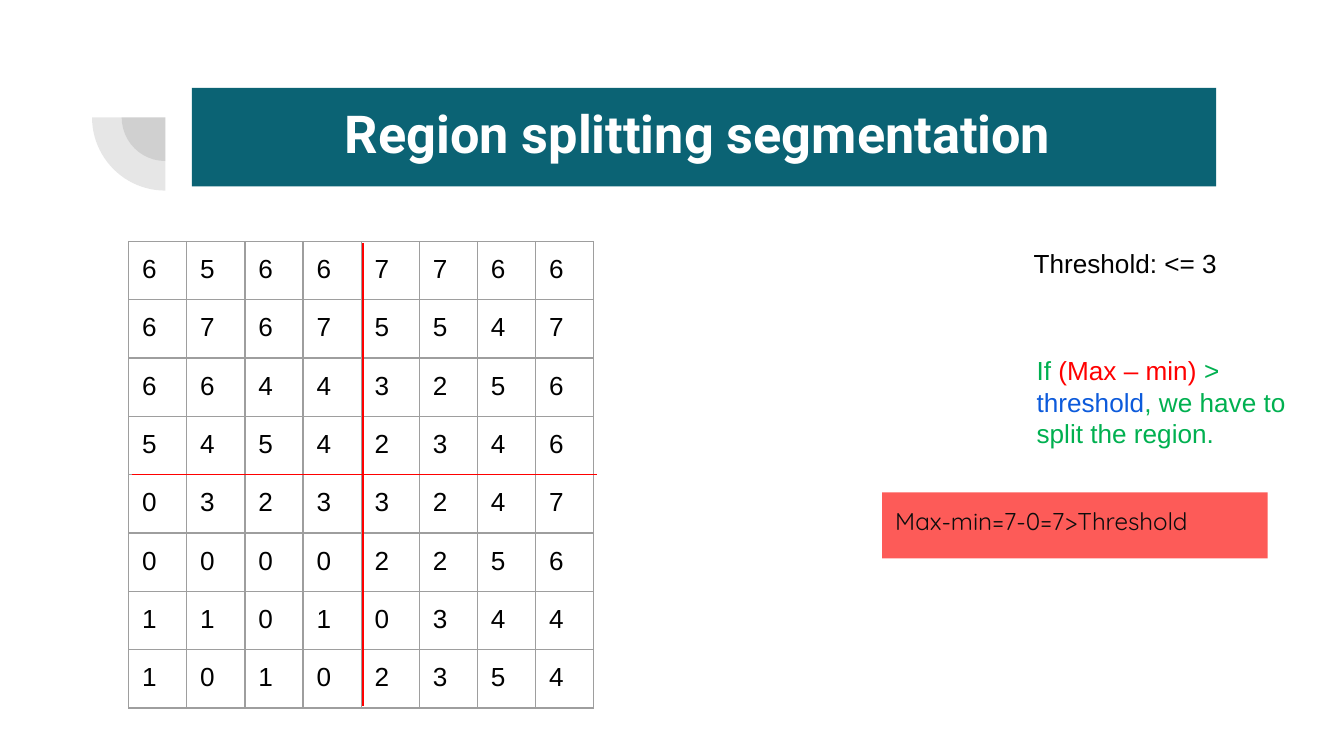
import pptx
import pptx.dml.color
import pptx.enum.shapes
import pptx.enum.text
import pptx.oxml
import pptx.oxml.ns
import pptx.util
from lxml import etree

SHAPES = pptx.enum.shapes.MSO_SHAPE
ANCHOR = pptx.enum.text.MSO_ANCHOR
ALIGN = pptx.enum.text.PP_ALIGN
GRID_COLUMNS = 100
PIXELS = ["65667766", "67675547", "66443256", "54542346",
          "03233247", "00002256", "11010344", "10102354"]


def color(code):
    return pptx.dml.color.RGBColor.from_string(code)


def write(para, text, size=14, font="Arial", ink="000000", bold=False):
    span = para.add_run()
    span.text = text
    span.font.size = pptx.util.Pt(size)
    span.font.name = font
    span.font.bold = bold
    span.font.color.rgb = color(ink)


def element(parent, tag, **attributes):
    return etree.SubElement(parent, pptx.oxml.ns.qn(tag), **attributes)


class Canvas:
    def __init__(self, deck):
        self.page = deck.slides.add_slide(deck.slide_layouts[6])
        self.unit = deck.slide_width / GRID_COLUMNS
        self.border = "9E9E9E"
        self.thin = pptx.util.Pt(0.75)

    def grid(self, *cells):
        return [round(cell * self.unit) for cell in cells]

    def frame(self, box, edge=1):
        frame = box.text_frame
        frame.word_wrap = True
        frame.vertical_anchor = ANCHOR.TOP
        frame.margin_left, frame.margin_right = self.grid(1, 1)
        frame.margin_top, frame.margin_bottom = self.grid(edge, edge)
        return frame.paragraphs[0]

    def shape(self, kind, place, fill):
        shape = self.page.shapes.add_shape(kind, *self.grid(*place))
        shape.shadow.inherit = False
        shape.fill.solid()
        shape.fill.fore_color.rgb = color(fill)
        shape.line.fill.background()
        return shape

    def quarter(self, center, radius, fill, opacity):
        x, y = center
        pie = self.shape(SHAPES.PIE, (x - radius, y - radius, 2 * radius, 2 * radius), fill)
        pie.rotation = 270
        pie.adjustments[0], pie.adjustments[1] = 108, 162
        tint = pie.fill._xPr.find(".//" + pptx.oxml.ns.qn("a:srgbClr"))
        element(tint, "a:alpha", val=str(opacity * 1000))

    def banner(self, place, fill, text, align=ALIGN.LEFT, **style):
        para = self.frame(self.shape(SHAPES.RECTANGLE, place, fill))
        para.alignment = align
        write(para, text, **style)

    def label(self, place, spans, edge=1):
        box = self.page.shapes.add_textbox(*self.grid(*place))
        para = self.frame(box, edge)
        for text, ink in spans:
            write(para, text, ink=ink)

    def table(self, left, top, pitch, lines):
        count = len(lines)
        place = self.grid(left, top, pitch * count, pitch * count)
        table = self.page.shapes.add_table(count, count, *place).table
        table.first_row = table.horz_banding = False
        for track in table.columns:
            track.width = self.grid(pitch)[0]
        for track in table.rows:
            track.height = self.grid(pitch)[0]
        for cell, digit in zip(table.iter_cells(), "".join(lines)):
            cell.margin_left, cell.margin_right, cell.margin_top, cell.margin_bottom = self.grid(1, 1, 1, 1)
            self.outline(cell)
            cell.fill.background()
            write(cell.text_frame.paragraphs[0], digit)

    def outline(self, cell):
        properties = cell._tc.get_or_add_tcPr()
        for side in "LRTB":
            line = element(properties, "a:ln" + side, w=str(self.thin))
            element(element(line, "a:solidFill"), "a:srgbClr", val=self.border)

    def line(self, start, end, ink):
        straight = pptx.enum.shapes.MSO_CONNECTOR.STRAIGHT
        line = self.page.shapes.add_connector(straight, *self.grid(*start, *end))
        line.line.color.rgb = color(ink)
        line.line.width = self.thin
        element(line._element.spPr, "a:effectLst")


def main():
    deck = pptx.Presentation()
    deck.slide_width = pptx.util.Inches(10)
    deck.slide_height = deck.slide_width * 9 // 16
    canvas = Canvas(deck)

    for radius in (3.25, 5.45):
        canvas.quarter((12.3, 8.73), radius, "424242", 13)
    canvas.banner((14.28, 6.54, 76.2, 7.34), "0B6374", "Region splitting segmentation ",
                  align=ALIGN.CENTER, size=28, font="Roboto", ink="FFFFFF", bold=True)

    canvas.label((75.92, 17.43, 23, 4.2), [("Threshold: <= 3", "000000")])
    canvas.label((76.14, 25.9, 21.5, 8.1), [
        ("If ", "00B050"), ("(Max – min) ", "FF0000"), ("> ", "00B050"),
        ("threshold", "0C5ADB"), (", we have to split the region.", "00B050")], edge=0.5)

    left, top, pitch = 9.57, 17.97, 4.33
    size = pitch * len(PIXELS)
    canvas.table(left, top, pitch, PIXELS)
    canvas.line((27, 18.1), (27, 52.5), "FF0000")
    canvas.line((9.8, 35.3), (44.4, 35.3), "FF0000")

    canvas.banner((65.63, 36.64, 28.7, 4.9), "FD5B58", "Max-min=7-0=7>Threshold",
                  size=13, font="Quicksand", ink="0D0D0D")
    deck.save("out.pptx")


if __name__ == "__main__":
    main()
